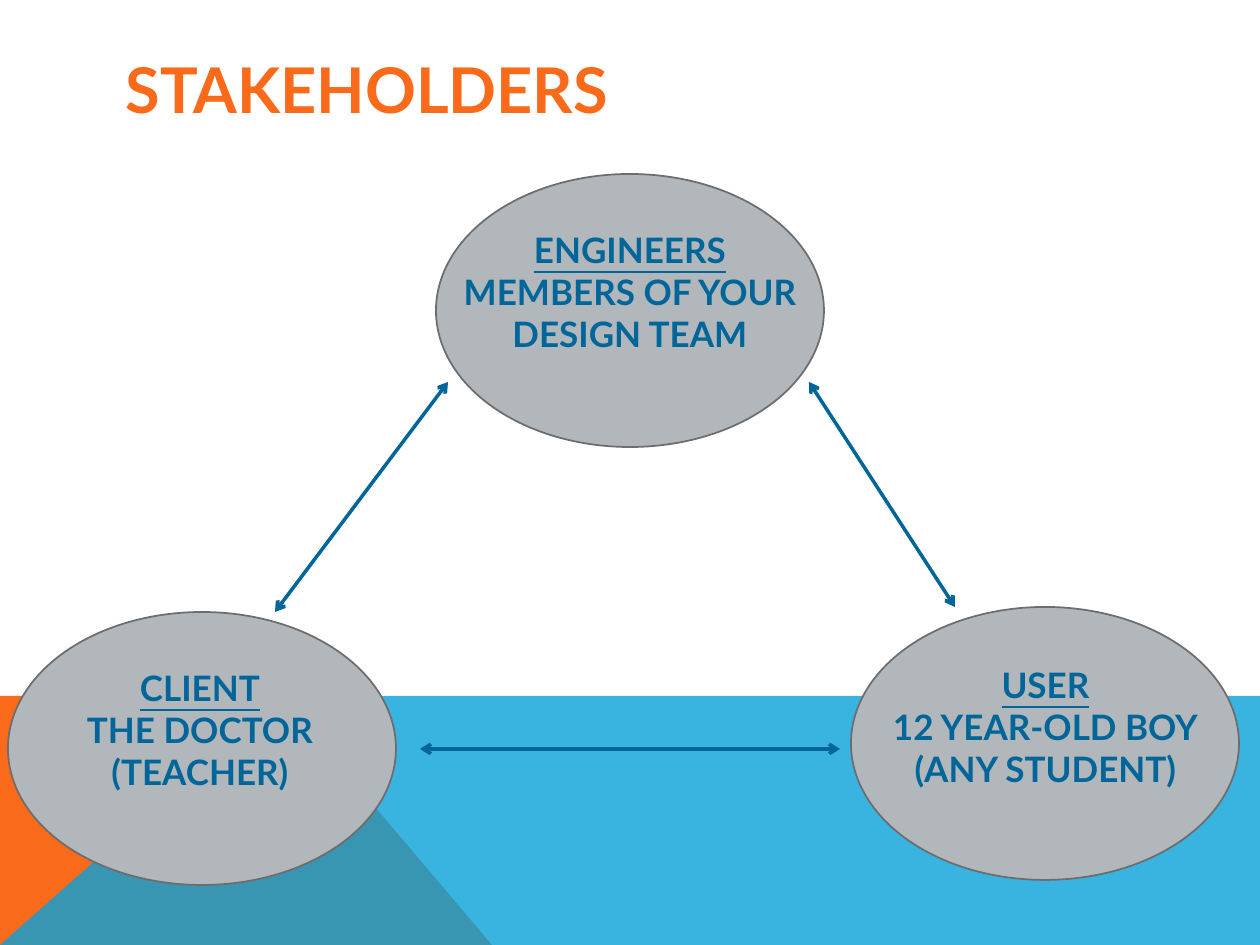
from lxml import etree
from pptx import Presentation
from pptx.dml.color import RGBColor
from pptx.enum.shapes import MSO_CONNECTOR, MSO_SHAPE
from pptx.enum.text import MSO_ANCHOR, MSO_AUTO_SIZE, PP_ALIGN
from pptx.oxml.ns import qn
from pptx.util import Emu, Pt

STRAIGHT = MSO_CONNECTOR.STRAIGHT
OVAL = MSO_SHAPE.OVAL
TOP, MIDDLE = MSO_ANCHOR.TOP, MSO_ANCHOR.MIDDLE
NO_AUTOFIT = MSO_AUTO_SIZE.NONE
LEFT, CENTER = PP_ALIGN.LEFT, PP_ALIGN.CENTER

SCALE = 914400 / 126  # EMU per px
WIDTH, HEIGHT = 1260, 945
FONT = "Lato"
COLORS = {
    "orange": "F96A1B",
    "sky": "08A1D9",
    "oval": "B2B7BB",
    "outline": "6D6D6D",
    "text": "006699",
}
OVAL_SIZE = (388, 273)

# Oval corner, label box relative to that corner, label lines
STAKEHOLDERS = [
    ((8, 612), (-30, 48, 444, 186), ["CLIENT", "THE DOCTOR", "(TEACHER)"]),
    ((851, 607), (21, 50, 347, 151), ["USER", "12 YEAR-OLD BOY", "(ANY STUDENT)"]),
    ((436, 174), (4, 48, 380, 175), ["ENGINEERS", "MEMBERS OF YOUR DESIGN TEAM"]),
]
ARROWS = [
    ((809, 382), (955, 607)),
    ((275, 612), (448, 382)),
    ((420, 749), (840, 749)),
]


def px(length):
    return Emu(round(length * SCALE))


def color(name):
    return RGBColor.from_string(COLORS[name])


def format_run(run, color_name, **values):
    for name, value in {"name": FONT, "bold": True, **values}.items():
        setattr(run.font, name, value)
    run.font.color.rgb = color(color_name)


def add_polygon(slide, points, color_name, opacity=100):
    builder = slide.shapes.build_freeform(*points[0], scale=SCALE)
    builder.add_line_segments(points[1:], close=True)
    shape = builder.convert_to_shape()
    shape.shadow.inherit = False
    shape.fill.solid()
    shape.fill.fore_color.rgb = color(color_name)
    shape.line.fill.background()
    if opacity < 100:
        fill_color = shape.fill._xPr.find(f"{qn('a:solidFill')}/{qn('a:srgbClr')}")
        etree.SubElement(fill_color, qn("a:alpha"), val=str(opacity * 1000))


def add_footer_band(slide, left, top, width, height):
    right, bottom = left + width, top + height
    peak = (left + 281, top)
    add_polygon(slide, [(left, bottom), (left, top), peak, (left + 492, bottom)], "orange")
    add_polygon(slide, [(left, bottom), peak, (right, top), (right, bottom)], "sky", 80)


def add_title(slide, left, top, width, height):
    title = slide.shapes.title
    box = {"left": left, "top": top, "width": width, "height": height}
    for name, value in box.items():
        setattr(title, name, px(value))
    frame = title.text_frame
    frame.auto_size = NO_AUTOFIT
    frame.vertical_anchor = MIDDLE
    paragraph = frame.paragraphs[0]
    paragraph.alignment = LEFT
    run = paragraph.add_run()
    run.text = "STAKEHOLDERS"
    format_run(run, "orange", size=Pt(36))


def add_stakeholder(slide, left, top, width, height, label_box, lines):
    oval = slide.shapes.add_shape(OVAL, px(left), px(top), px(width), px(height))
    oval.shadow.inherit = False
    oval.fill.solid()
    oval.fill.fore_color.rgb = color("oval")
    oval.line.color.rgb = color("outline")
    oval.line.width = Pt(1)

    # Label: underlined role, then its description
    x, y, label_width, label_height = label_box
    label = slide.shapes.add_textbox(
        px(left + x), px(top + y), px(label_width), px(label_height))
    frame = label.text_frame
    frame.word_wrap = True
    frame.vertical_anchor = TOP
    for index, line in enumerate(lines):
        paragraph = frame.add_paragraph() if index else frame.paragraphs[0]
        paragraph.alignment = CENTER
        run = paragraph.add_run()
        run.text = line
        format_run(run, "text", size=Pt(20), underline=index == 0)


def add_double_arrow(slide, start, end):
    connector = slide.shapes.add_connector(STRAIGHT, *map(px, start + end))
    connector.line.color.rgb = color("text")
    connector.line.width = Pt(2)
    line = connector.line._get_or_add_ln()
    for tag in ("a:headEnd", "a:tailEnd"):
        etree.SubElement(line, qn(tag), type="arrow")
    etree.SubElement(line.getparent(), qn("a:effectLst"))


def main():
    presentation = Presentation()
    presentation.slide_width, presentation.slide_height = px(WIDTH), px(HEIGHT)
    slide = presentation.slides.add_slide(presentation.slide_layouts[5])

    add_footer_band(slide, 0, 696, WIDTH, HEIGHT - 696)
    add_title(slide, 113, 50, 1036, 76)
    for corner, label_box, lines in STAKEHOLDERS:
        add_stakeholder(slide, *corner, *OVAL_SIZE, label_box, lines)
    for start, end in ARROWS:
        add_double_arrow(slide, start, end)

    presentation.save("out.pptx")


if __name__ == "__main__":
    main()
